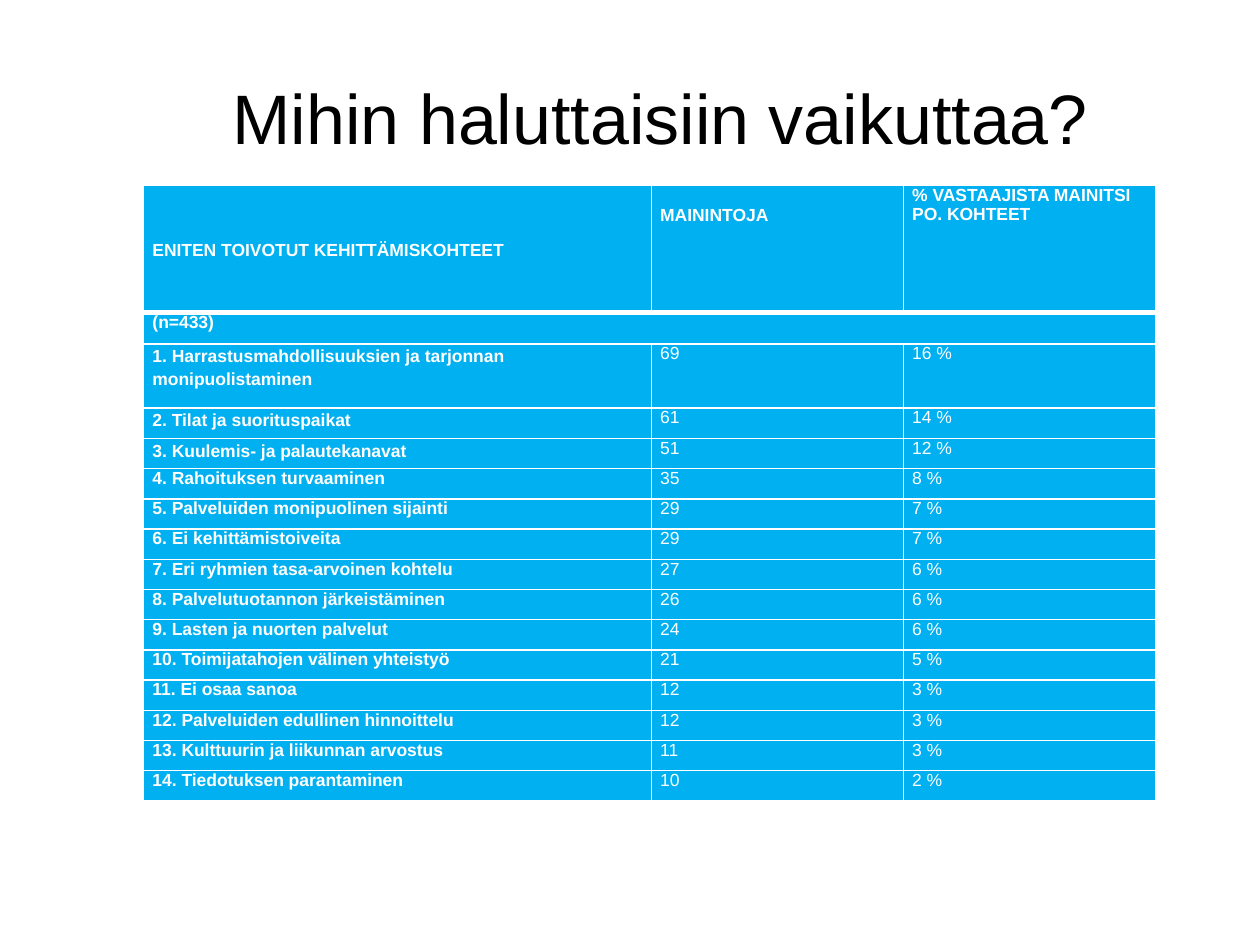
from dataclasses import dataclass

from lxml import etree
from pptx import Presentation
from pptx.dml.color import RGBColor
from pptx.enum import text
from pptx.oxml import ns
from pptx.util import Inches, Pt


@dataclass(frozen=True)
class Theme:
    font: str = "Arial"
    ink: str = "000000"
    paper: str = "FFFFFF"
    accent: str = "00B0F0"
    title_size: int = 40
    table_size: int = 10
    rule: int = 1
    header_rule: int = 3


theme = Theme()


def add_run(paragraph, wording, size, color, bold=False):
    run = paragraph.add_run()
    run.text = wording
    run.font.name = theme.font
    run.font.size = Pt(size)
    run.font.bold = bold
    run.font.color.rgb = RGBColor.from_string(color)


def add_border(cell, side, width):
    line = etree.SubElement(cell._tc.get_or_add_tcPr(), ns.qn(f"a:{side}"), w=str(Pt(width)))
    fill = etree.SubElement(line, ns.qn("a:solidFill"))
    etree.SubElement(fill, ns.qn("a:srgbClr"), val=theme.paper)


presentation = Presentation()
presentation.slide_width = Inches(10)
presentation.slide_height = Inches(7.5)
slide = presentation.slides.add_slide(presentation.slide_layouts[5])

heading = slide.shapes.title
heading.left, heading.top = Inches(0.91), Inches(0.3)
heading.width, heading.height = Inches(8.66), Inches(1.25)
heading.text_frame.vertical_anchor = text.MSO_ANCHOR.MIDDLE
heading_line = heading.text_frame.paragraphs[0]
heading_line.alignment = text.PP_ALIGN.CENTER
add_run(heading_line, "Mihin haluttaisiin vaikuttaa?", theme.title_size, theme.ink)

wishes = [
    ("Harrastusmahdollisuuksien ja tarjonnan monipuolistaminen", 69, 16),
    ("Tilat ja suorituspaikat", 61, 14),
    ("Kuulemis- ja palautekanavat", 51, 12),
    ("Rahoituksen turvaaminen", 35, 8),
    ("Palveluiden monipuolinen sijainti", 29, 7),
    ("Ei kehittämistoiveita", 29, 7),
    ("Eri ryhmien tasa-arvoinen kohtelu", 27, 6),
    ("Palvelutuotannon järkeistäminen", 26, 6),
    ("Lasten ja nuorten palvelut", 24, 6),
    ("Toimijatahojen välinen yhteistyö", 21, 5),
    ("Ei osaa sanoa", 12, 3),
    ("Palveluiden edullinen hinnoittelu", 12, 3),
    ("Kulttuurin ja liikunnan arvostus", 11, 3),
    ("Tiedotuksen parantaminen", 10, 2),
]
rows = [
    ("ENITEN TOIVOTUT KEHITTÄMISKOHTEET", "MAININTOJA", "% VASTAAJISTA MAINITSI PO. KOHTEET"),
    ("(n=433)", "", ""),
]
for rank, (wish, mentions, share) in enumerate(wishes, 1):
    rows.append((f"{rank}. {wish}", str(mentions), f"{share} %"))

column_widths = [4.03, 2, 2]
row_heights = [1.01, 0.25, 0.51] + [0.24] * (len(wishes) - 1)
loose_rows = (0, 2, 3, 4)

results = slide.shapes.add_table(
    len(rows), len(column_widths), Inches(1.14), Inches(1.47),
    Inches(sum(column_widths)), Inches(sum(row_heights)),
).table
results.horz_banding = False
for column, width in zip(results.columns, column_widths):
    column.width = Inches(width)
for row, height in zip(results.rows, row_heights):
    row.height = Inches(height)

for row_index, row in enumerate(rows):
    for column_index, wording in enumerate(row):
        cell = results.cell(row_index, column_index)
        cell.margin_left = cell.margin_right = Inches(0.07)
        cell.margin_top = cell.margin_bottom = 0
        for side in ("lnL", "lnR", "lnT", "lnB"):
            header_edge = (row_index, side) in ((0, "lnB"), (1, "lnT"))
            add_border(cell, side, theme.header_rule if header_edge else theme.rule)
        cell.fill.solid()
        cell.fill.fore_color.rgb = RGBColor.from_string(theme.accent)
        paragraph = cell.text_frame.paragraphs[0]
        paragraph.font.size = Pt(theme.table_size)
        if column_index == 0 and row_index in loose_rows:
            paragraph.line_spacing = 1.15
        if wording:
            bold = column_index == 0 or row_index == 0
            add_run(paragraph, wording, theme.table_size, theme.paper, bold)

results.cell(0, 0).vertical_anchor = text.MSO_ANCHOR.MIDDLE
results.cell(0, 1).margin_top = Inches(0.16)
results.cell(1, 0).merge(results.cell(1, 2))

presentation.save("out.pptx")
